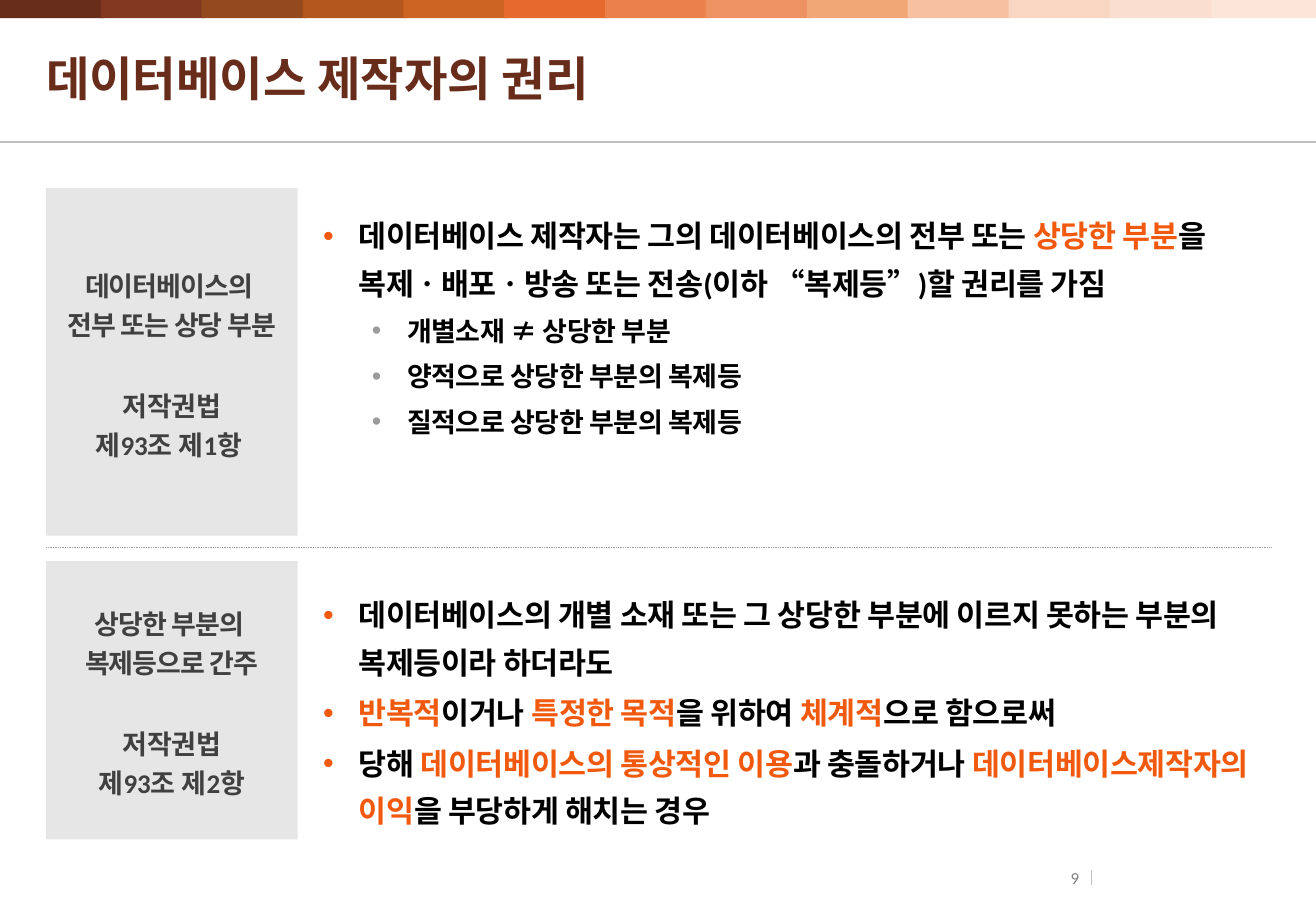
"""Builds the slide on the rights of database makers under copyright law."""
from lxml import etree
from pptx import Presentation
from pptx.dml.color import RGBColor
from pptx.enum.dml import MSO_LINE
from pptx.enum.shapes import MSO_CONNECTOR, MSO_SHAPE
from pptx.enum.text import MSO_ANCHOR, MSO_AUTO_SIZE, PP_ALIGN
from pptx.oxml.ns import qn
from pptx.util import Pt

PX = 9144
RECT = MSO_SHAPE.RECTANGLE
STRAIGHT = MSO_CONNECTOR.STRAIGHT
DOTTED = MSO_LINE.ROUND_DOT
MIDDLE, TOP = MSO_ANCHOR.MIDDLE, MSO_ANCHOR.TOP
CENTER, LEFT, RIGHT = PP_ALIGN.CENTER, PP_ALIGN.LEFT, PP_ALIGN.RIGHT
NO_AUTOFIT = MSO_AUTO_SIZE.NONE
BROWN, ORANGE, BLACK = "682C1A", "F1590E", "000000"
GREY, BULLET_GREY, RULE_GREY = "E6E6E6", "9B9B9B", "BFBFBF"


def color(hex_code):
    return RGBColor.from_string(hex_code)


def style(run, size, hex_code, bold=True, spacing=0):
    run.font.name = "Calibri"
    run.font.size = Pt(size)
    run.font.bold = bold
    run.font.color.rgb = color(hex_code)
    run.font._element.set("spc", str(spacing))


prs = Presentation()
prs.slide_width, prs.slide_height = 1083 * PX, 750 * PX
slide = prs.slides.add_slide(prs.slide_layouts[3])
shapes = slide.shapes

STRIP = ["682C1A", "833821", "95491F", "B4571E", "CC6322", "E6692D", "EC804C",
         "EE9264", "F2A776", "F7C0A0", "F8D6C1", "FADECF", "FCE5D9"]
for i, shade in enumerate(STRIP):
    tile = shapes.add_shape(RECT, 997 * i // 12 * PX, 0, 86 * PX, 15 * PX)
    tile.shadow.inherit = False
    tile.fill.solid()
    tile.fill.fore_color.rgb = color(shade)
    tile.line.fill.background()

RULES = [
    (0, 117, 1083, 117, RULE_GREY, 1, None),
    (898, 716, 898, 729, RULE_GREY, 0.75, None),
    (38, 451, 1046, 451, BULLET_GREY, 0.5, DOTTED),
]
for x1, y1, x2, y2, shade, weight, dash in RULES:
    rule = shapes.add_connector(STRAIGHT, x1 * PX, y1 * PX, x2 * PX, y2 * PX)
    rule.line.color.rgb = color(shade)
    rule.line.width = Pt(weight)
    rule.line.dash_style = dash
    etree.SubElement(rule._element.spPr, qn("a:effectLst"))

title = shapes.title
title.left, title.top, title.width, title.height = 38 * PX, 21 * PX, 1008 * PX, 86 * PX
heading = title.text_frame
heading.text = "데이터베이스 제작자의 권리"
heading.auto_size = NO_AUTOFIT
heading.vertical_anchor = MIDDLE
heading.margin_left = heading.margin_right = heading.margin_top = heading.margin_bottom = 0
heading.paragraphs[0].alignment = LEFT
style(heading.paragraphs[0].runs[0], 28, BROWN)

page_number = shapes.add_textbox(841 * PX, 715 * PX, 57 * PX, 15 * PX).text_frame
page_number.text = "9"
page_number.word_wrap = True
page_number.vertical_anchor = MIDDLE
page_number.paragraphs[0].alignment = RIGHT
style(page_number.paragraphs[0].runs[0], 10, "808080", bold=False)

LABELS = [
    (155, 286, "데이터베이스의 \v전부 또는 상당 부분", "제93조 제1항 "),
    (462, 229, "상당한 부분의 \v복제등으로 간주", "제93조 제2항"),
]
for top, height, topic, article in LABELS:
    label = shapes.add_shape(RECT, 38 * PX, top * PX, 207 * PX, height * PX)
    label.shadow.inherit = False
    label.fill.solid()
    label.fill.fore_color.rgb = color(GREY)
    label.line.fill.background()
    label.text_frame.word_wrap = True
    label.text_frame.vertical_anchor = MIDDLE
    label.text_frame.text = "\n".join([topic, "저작권법", article])
    for i, paragraph in enumerate(label.text_frame.paragraphs):
        paragraph.alignment = CENTER
        paragraph.line_spacing = 1.2
        paragraph.space_before = Pt(25 if i == 1 else 0)
        for run in paragraph.runs:
            style(run, 16, "404040", spacing=0 if i else -50)

# Text between bars is emphasised.
PROVISIONS = [
    (1, 165, 204, [
        (0, "데이터베이스 제작자는 그의 데이터베이스의 전부 또는 |상당한 부분|을 "
            "복제ㆍ배포ㆍ방송 또는 전송(이하 “복제등”)할 권리를 가짐"),
        (1, "개별소재 ≠ 상당한 부분"),
        (1, "양적으로 상당한 부분의 복제등"),
        (1, "질적으로 상당한 부분의 복제등"),
    ]),
    (2, 477, 209, [
        (0, "데이터베이스의 개별 소재 또는 그 상당한 부분에 이르지 못하는 부분의 "
            "복제등이라 하더라도"),
        (0, "|반복적|이거나 |특정한 목적|을 위하여 |체계적|으로 함으로써"),
        (0, "당해 |데이터베이스의 통상적인 이용|과 충돌하거나 "
            "|데이터베이스제작자의 이익|을 부당하게 해치는 경우"),
    ]),
]
LEVELS = [(29, 18, ORANGE), (69, 16, BULLET_GREY)]
for idx, top, height, points in PROVISIONS:
    provision = slide.placeholders[idx]
    provision.left, provision.top = 256 * PX, top * PX
    provision.width, provision.height = 790 * PX, height * PX
    body = provision.text_frame
    body.auto_size = NO_AUTOFIT
    body.vertical_anchor = TOP
    for i, (level, wording) in enumerate(points):
        indent, size, bullet_shade = LEVELS[level]
        paragraph = body.add_paragraph() if i else body.paragraphs[0]
        paragraph.level = level
        paragraph.alignment = LEFT
        paragraph.line_spacing = 1.3
        paragraph.space_before = Pt(0)
        paragraph.space_after = Pt(2)
        props = paragraph._p.get_or_add_pPr()
        props.set("marL", str(indent * PX))
        props.set("indent", str(-29 * PX))
        bullet_color = etree.SubElement(props, qn("a:buClr"))
        etree.SubElement(bullet_color, qn("a:srgbClr"), val=bullet_shade)
        etree.SubElement(props, qn("a:buFont"), typeface="Arial")
        etree.SubElement(props, qn("a:buChar"), char="•")
        for part, phrase in enumerate(wording.split("|")):
            if phrase:
                run = paragraph.add_run()
                run.text = phrase
                style(run, size, ORANGE if part % 2 else BLACK, spacing=-20)

prs.save("out.pptx")
